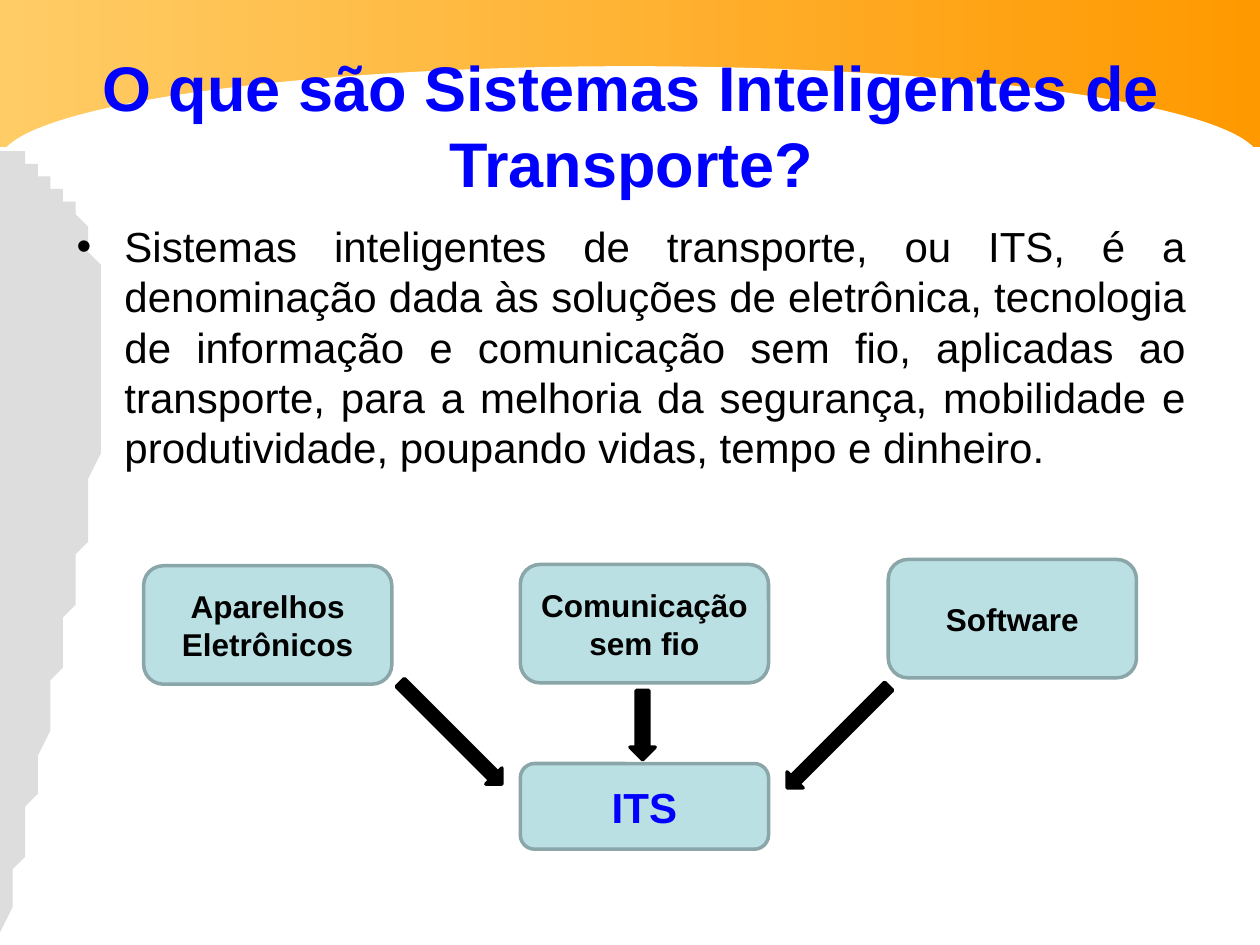
from dataclasses import dataclass

from lxml.etree import SubElement
from pptx import Presentation
from pptx.dml.color import RGBColor as RGB
from pptx.enum.shapes import MSO_SHAPE as Shape
from pptx.enum.text import MSO_ANCHOR as Anchor, MSO_AUTO_SIZE as AutoSize, PP_ALIGN as Align
from pptx.oxml.ns import qn
from pptx.util import Inches, Pt

CELL = Inches(0.1)


@dataclass(frozen=True)
class Theme:
    """Colours, font and type sizes of the deck."""
    font: str = "Arial"
    title: int = 36
    body: int = 24
    label: int = 18
    line: int = 2
    ink: str = "000000"
    accent: str = "0000FF"
    paper: str = "FFFFFF"
    sweep: str = "DDDDDD"
    band: tuple = ("FFCC66", "FF9900")
    node: str = "BBE0E3"
    edge: str = "8AA6A8"


@dataclass(frozen=True)
class Box:
    """A region measured in grid cells."""
    col: float
    row: float
    cols: float
    rows: float

    def area(self, col, row, cols, rows):
        """Return a box placed relative to this one."""
        return Box(self.col + col, self.row + row, cols, rows)

    def emu(self):
        """Return left, top, width and height as lengths."""
        return [round(v * CELL) for v in (self.col, self.row, self.cols, self.rows)]


T = Theme()


def rgb(value):
    """Turn a hex string into a colour."""
    return RGB.from_string(value)


def paint(sp, fill, line=None):
    """Give a shape a flat fill and an optional outline."""
    sp.shadow.inherit = False
    sp.fill.solid()
    sp.fill.fore_color.rgb = rgb(fill)
    if line:
        sp.line.color.rgb = rgb(line)
        sp.line.width = Pt(T.line)
    else:
        sp.line.fill.background()


def add_shape(s, kind, box, fill, line=None):
    """Add a painted preset shape."""
    sp = s.shapes.add_shape(kind, *box.emu())
    paint(sp, fill, line)
    return sp


def write(p, text, size, color, bold=False, align=Align.CENTER):
    """Add one formatted run to a paragraph."""
    p.alignment = align
    r = p.add_run()
    r.text = text
    f = r.font
    f.name, f.size, f.bold = T.font, Pt(size), bold
    f.color.rgb = rgb(color)


def bezier(points, steps=40):
    """Sample a cubic curve."""
    a, b, c, d = points
    for i in range(steps + 1):
        t = i / steps
        u = 1 - t
        yield tuple(u**3 * a[k] + 3 * u * u * t * b[k] + 3 * u * t * t * c[k] + t**3 * d[k]
                    for k in (0, 1))


def backdrop(s, box):
    """Draw the gradient band, its curved lower edge and the side sweep."""
    band = add_shape(s, Shape.RECTANGLE, box.area(0, 0, box.cols, 11.7), T.band[0])
    band.fill.gradient()
    band.fill.gradient_angle = 0
    for stop, color, place in zip(band.fill.gradient_stops, T.band, (0, 1)):
        stop.color.rgb, stop.position = rgb(color), place
    moon = add_shape(s, Shape.MOON, box.area(46.25, -41, 7.5, box.cols), T.paper)
    moon.rotation = 90
    moon.adjustments[0] = 0.875
    top, mid, end = (0, 11.5), (8.3, 27.2), (0, box.rows)
    upper = bezier((top, (4.1, 14), (8.3, 16.6), mid))
    lower = bezier((mid, (8.3, 37.7), (4.1, 56.4), end))
    start, *outline = [(box.col + x, box.row + y) for x, y in (*upper, *lower)]
    pen = s.shapes.build_freeform(*start, scale=CELL)
    pen.add_line_segments(outline, close=True)
    paint(pen.convert_to_shape(), T.sweep)


def heading(s, box, text):
    """Place the title in front of the backdrop."""
    sp = s.shapes.title
    sp.element.getparent().append(sp.element)
    sp.left, sp.top, sp.width, sp.height = box.emu()
    tf = sp.text_frame
    tf.word_wrap, tf.auto_size = True, AutoSize.NONE
    tf.vertical_anchor = Anchor.MIDDLE
    write(tf.paragraphs[0], text, T.title, T.accent, bold=True)


def definition(s, box, text):
    """Write the justified bullet paragraph."""
    tf = s.shapes.add_textbox(*box.emu()).text_frame
    tf.word_wrap = True
    p = tf.paragraphs[0]
    pPr = p._p.get_or_add_pPr()
    indent = Inches(0.38)
    pPr.set("marL", str(indent))
    pPr.set("indent", str(-indent))
    SubElement(pPr, qn("a:buFont")).set("typeface", T.font)
    SubElement(pPr, qn("a:buChar")).set("char", "•")
    write(p, text, T.body, T.ink, align=Align.JUSTIFY)


def node(s, box, text, size, color):
    """Add a rounded box with a centred bold label."""
    tf = add_shape(s, Shape.ROUNDED_RECTANGLE, box, T.node, T.edge).text_frame
    tf.word_wrap = True
    tf.vertical_anchor = Anchor.MIDDLE
    tf.margin_left = tf.margin_right = Inches(0.04)
    write(tf.paragraphs[0], text, size, color, bold=True)


def diagram(s, box):
    """Draw three sources pointing at one result."""
    width, middle = 19.7, 29.9
    sources = [("Aparelhos Eletrônicos", 0, 0.5),
               ("Comunicação sem fio", middle, 0.4),
               ("Software", 59.1, 0)]
    for text, col, row in sources:
        node(s, box.area(col, row, width, 9.4), text, T.label, T.ink)
    node(s, box.area(middle, 16.2, width, 6.8), "ITS", T.body, T.accent)
    arrows = [(38.6, 10.4, 2, 5.5, 0),
              (54.2, 8.4, 1.8, 11.4, 45),
              (23.5, 8.1, 1.8, 11.4, 315)]
    for *place, turn in arrows:
        arrow = add_shape(s, Shape.DOWN_ARROW, box.area(*place), T.ink, T.ink)
        arrow.rotation = turn


def main():
    """Build and save the slide."""
    prs = Presentation()
    prs.slide_width, prs.slide_height = Inches(10), Inches(7.5)
    s = prs.slides.add_slide(prs.slide_layouts[5])
    page = Box(0, 0, 100, 75)
    backdrop(s, page)
    heading(s, page.area(5.1, 3.6, 90, 12.5), "O que são Sistemas Inteligentes de Transporte?")
    definition(s, page.area(5.1, 17, 90, 22.7),
               "Sistemas inteligentes de transporte, ou ITS, é a denominação dada às soluções "
               "de eletrônica, tecnologia de informação e comunicação sem fio, aplicadas ao "
               "transporte, para a melhoria da segurança, mobilidade e produtividade, "
               "poupando vidas, tempo e dinheiro.")
    diagram(s, page.area(11.4, 44.4, 78.8, 23))
    prs.save("out.pptx")


if __name__ == "__main__":
    main()
